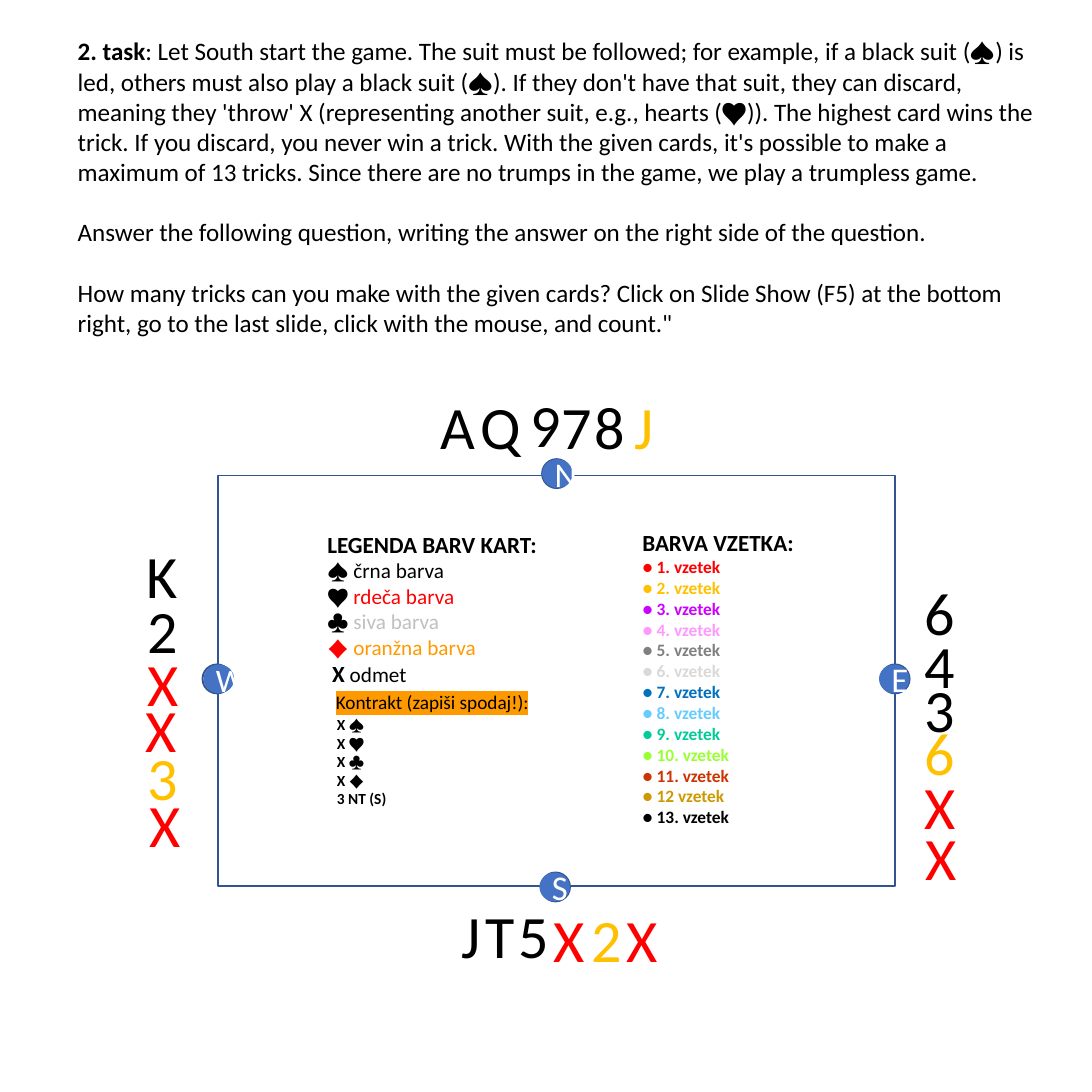
from dataclasses import dataclass
from lxml.etree import SubElement
from pptx import Presentation
from pptx.dml.color import RGBColor
from pptx.enum.shapes import MSO_SHAPE
from pptx.enum.text import MSO_ANCHOR, MSO_AUTO_SIZE, PP_ALIGN
from pptx.oxml.ns import qn
from pptx.shapes.autoshape import Shape
from pptx.slide import Slide
from pptx.util import Cm, Pt

FONT = "Calibri"
BLACK = RGBColor(0x00, 0x00, 0x00)
WHITE = RGBColor(0xFF, 0xFF, 0xFF)
RED = RGBColor(0xFF, 0x00, 0x00)
GOLD = RGBColor(0xFF, 0xC0, 0x00)
SILVER = RGBColor(0xC0, 0xC0, 0xC0)
ORANGE = RGBColor(0xFF, 0x99, 0x00)
TABLE_LINE = RGBColor(0x32, 0x54, 0x91)
SEAT_FILL = RGBColor(0x44, 0x72, 0xC4)
TRICK_COLORS = [
    RED, GOLD, RGBColor(0xCC, 0x00, 0xFF), RGBColor(0xFF, 0x99, 0xFF),
    RGBColor(0x80, 0x80, 0x80), RGBColor(0xD9, 0xD9, 0xD9),
    RGBColor(0x00, 0x70, 0xC0), RGBColor(0x66, 0xCC, 0xFF),
    RGBColor(0x00, 0xCC, 0x99), RGBColor(0x99, 0xFF, 0x33),
    RGBColor(0xCC, 0x33, 0x00), RGBColor(0xCC, 0x99, 0x00), BLACK,
]


@dataclass(frozen=True)
class TextRun:
    text: str
    size: float
    color: RGBColor = BLACK
    bold: bool = False
    highlight: RGBColor | None = None


@dataclass(frozen=True)
class Line:
    runs: list[TextRun]
    align: PP_ALIGN = PP_ALIGN.LEFT
    space_before: float = 0
    indent: float = 0


@dataclass(frozen=True)
class Box:
    left: float
    top: float
    width: float
    height: float


@dataclass(frozen=True)
class Card:
    rank: str
    left: float
    top: float
    color: RGBColor = BLACK


@dataclass(frozen=True)
class Seat:
    letter: str
    left: float
    ring_left: float
    top: float
    size: float = 18


CARDS = [
    Card("A", 7.82, 7.01), Card("Q", 8.56, 7.01), Card("9", 9.47, 6.98),
    Card("7", 10.03, 7.01), Card("8", 10.64, 7.01), Card("J", 11.38, 7.01, GOLD),
    Card("J", 8.2, 16.33), Card("T", 8.64, 16.33), Card("5", 9.25, 16.33),
    Card("X", 9.88, 16.41, RED), Card("2", 10.59, 16.41, GOLD), Card("X", 11.23, 16.41, RED),
    Card("K", 2.44, 9.73), Card("2", 2.46, 10.74), Card("X", 2.46, 11.71, RED),
    Card("X", 2.41, 12.55, RED), Card("3", 2.46, 13.44, GOLD), Card("X", 2.49, 14.3, RED),
    Card("6", 16.69, 10.41), Card("4", 16.69, 11.38), Card("3", 16.69, 12.19),
    Card("6", 16.69, 12.98, GOLD), Card("X", 16.69, 13.97, RED), Card("X", 16.71, 14.91, RED),
]
SEATS = [
    Seat("N", 9.93, 9.93, 8.41), Seat("S", 9.88, 9.91, 15.98),
    Seat("W", 3.73, 3.71, 12.17, 17), Seat("E", 16.1, 16.13, 12.17),
]
TASK = [
    Line([TextRun("2. task", 13, bold=True), TextRun(
        ": Let South start the game. The suit must be followed; for example, if a black "
        "suit (♠) is led, others must also play a black suit (♠). If they don't have that "
        "suit, they can discard, meaning they 'throw' X (representing another suit, e.g., "
        "hearts (♥)). The highest card wins the trick. If you discard, you never win a "
        "trick. With the given cards, it's possible to make a maximum of 13 tricks. Since "
        "there are no trumps in the game, we play a trumpless game.", 13)]),
    Line([TextRun("Answer the following question, writing the answer on the right side of "
                  "the question.", 13)], space_before=15.9),
    Line([TextRun("How many tricks can you make with the given cards? Click on Slide Show "
                  "(F5) at the bottom right, go to the last slide, click with the mouse, "
                  'and count."', 13)], space_before=15.9),
]
SUITS = [("♠ ", BLACK, "črna barva", BLACK), ("♥ ", BLACK, "rdeča barva", RED),
         ("♣ ", BLACK, "siva barva", SILVER), ("♦ ", RED, "oranžna barva", ORANGE)]
LEGEND = [
    Line([TextRun("LEGENDA BARV KART:", 12, bold=True)]),
    *[Line([TextRun(symbol, 11, symbol_color), TextRun(name, 11, name_color)])
      for symbol, symbol_color, name, name_color in SUITS],
    Line([TextRun("X", 12, bold=True), TextRun(" odmet", 11)], indent=0.09),
]
TRICKS = [
    Line([TextRun("BARVA VZETKA:", 12, bold=True)]),
    *[Line([TextRun(f"● {number}{'' if number == 12 else '.'} vzetek", 9, color, True)])
      for number, color in enumerate(TRICK_COLORS, 1)],
]
CONTRACT = [Line([TextRun("Kontrakt (zapiši spodaj!):", 10, highlight=ORANGE)], PP_ALIGN.RIGHT)]
BIDS = [Line([TextRun(bid, 8, bold=True)]) for bid in ("X ♠", "X ♥", "X ♣", "X ♦", "3 NT (S)")]


def write_lines(shape: Shape, lines: list[Line]) -> None:
    """Fill a shape with formatted, unbulleted paragraphs."""
    frame = shape.text_frame
    for index, line in enumerate(lines):
        paragraph = frame.add_paragraph() if index else frame.paragraphs[0]
        paragraph.alignment = line.align
        paragraph.space_before = Pt(line.space_before)
        properties = paragraph._p.get_or_add_pPr()
        properties.set("marL", str(Cm(line.indent)))
        properties.set("indent", "0")
        SubElement(properties, qn("a:buNone"))
        for item in line.runs:
            run = paragraph.add_run()
            run.text = item.text
            run.font.name = FONT
            run.font.size = Pt(item.size)
            run.font.bold = item.bold
            run.font.color.rgb = item.color
            if item.highlight is not None:
                run_properties = run._r.get_or_add_rPr()
                highlight = SubElement(run_properties, qn("a:highlight"))
                SubElement(highlight, qn("a:srgbClr"), val=str(item.highlight))
                run_properties.find(qn("a:solidFill")).addnext(highlight)


def place_text(shape: Shape, box: Box, lines: list[Line]) -> None:
    """Move a text shape into its box and write its lines from the top."""
    shape.left, shape.top = Cm(box.left), Cm(box.top)
    shape.width, shape.height = Cm(box.width), Cm(box.height)
    shape.text_frame.word_wrap = True
    shape.text_frame.auto_size = MSO_AUTO_SIZE.NONE
    shape.text_frame.vertical_anchor = MSO_ANCHOR.TOP
    write_lines(shape, lines)


def add_text(slide: Slide, box: Box, lines: list[Line]) -> None:
    """Add a text box holding the given lines."""
    place_text(slide.shapes.add_textbox(0, 0, 0, 0), box, lines)


def add_outline(slide: Slide, kind: MSO_SHAPE, box: Box) -> None:
    """Add an unfilled shape with the table's line."""
    shape = slide.shapes.add_shape(kind, Cm(box.left), Cm(box.top), Cm(box.width), Cm(box.height))
    shape.shadow.inherit = False
    shape.fill.background()
    shape.line.color.rgb = TABLE_LINE
    shape.line.width = Pt(1)


def add_seat(slide: Slide, seat: Seat) -> None:
    """Add a ringed disc naming one player."""
    add_outline(slide, MSO_SHAPE.OVAL, Box(seat.ring_left, seat.top, 0.53, 0.53))
    disc = slide.shapes.add_shape(MSO_SHAPE.OVAL, Cm(seat.left), Cm(seat.top), Cm(0.56), Cm(0.53))
    disc.shadow.inherit = False
    disc.fill.solid()
    disc.fill.fore_color.rgb = SEAT_FILL
    disc.line.fill.background()
    write_lines(disc, [Line([TextRun(seat.letter, seat.size, WHITE)], PP_ALIGN.CENTER)])


def main() -> None:
    """Build the bridge task slide."""
    presentation = Presentation()
    presentation.slide_width = presentation.slide_height = Cm(20)
    slide = presentation.slides.add_slide(presentation.slide_layouts[3])
    place_text(slide.shapes.title, Box(1.17, 0.53, 18.03, 5.82), TASK)
    place_text(slide.placeholders[1], Box(5.74, 9.58, 4.45, 3.18), LEGEND)
    place_text(slide.placeholders[2], Box(11.51, 9.55, 3.38, 5.77), TRICKS)
    add_text(slide, Box(5.69, 12.52, 4.24, 0.69), CONTRACT)
    add_text(slide, Box(5.92, 12.98, 1.7, 1.96), BIDS)
    add_outline(slide, MSO_SHAPE.RECTANGLE, Box(3.99, 8.71, 12.4, 7.52))
    for seat in SEATS:
        add_seat(slide, seat)
    for card in CARDS:
        add_text(slide, Box(card.left, card.top, 1.42, 1.6),
                 [Line([TextRun(card.rank, 31.2, card.color)])])
    presentation.save("out.pptx")


if __name__ == "__main__":
    main()
